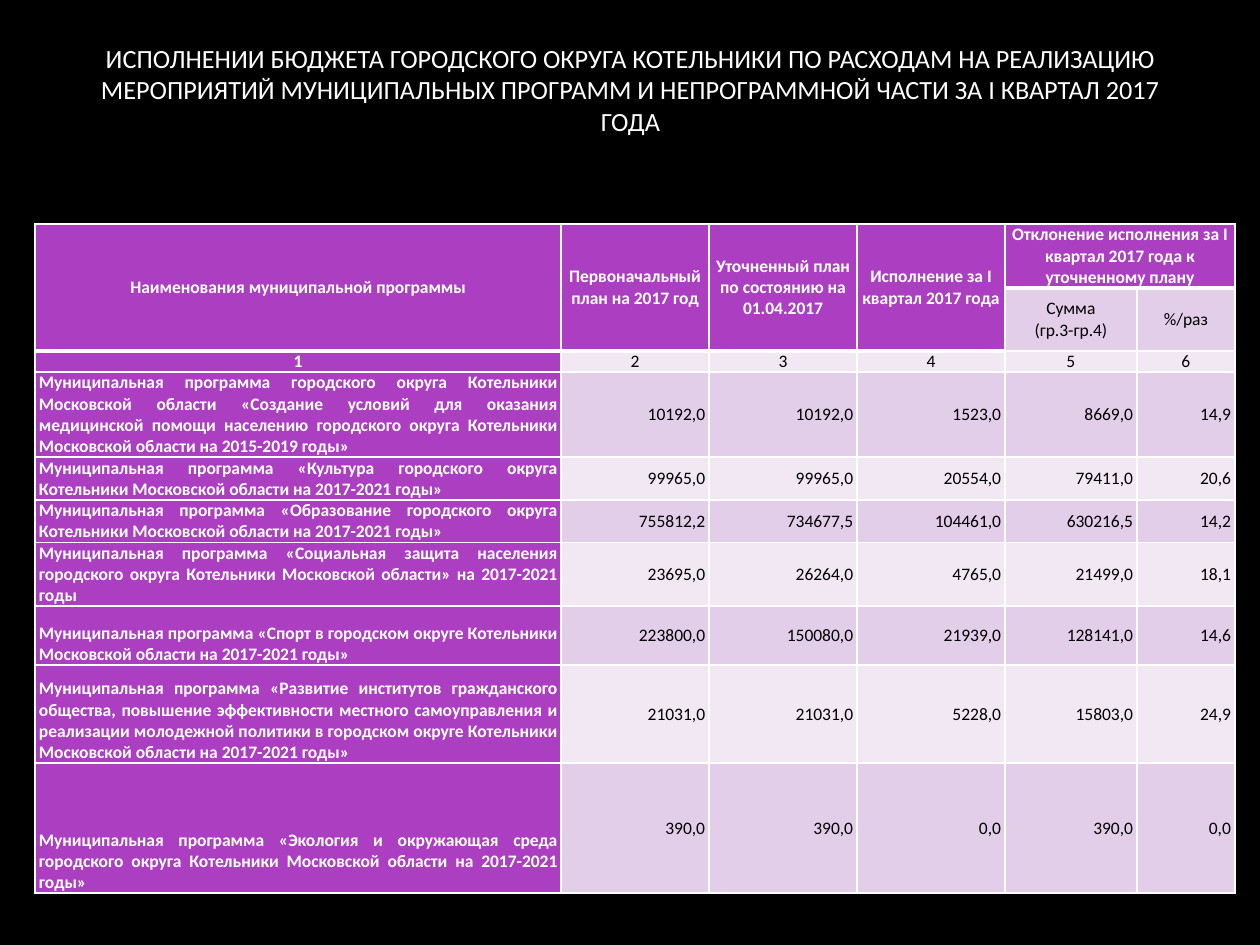
from dataclasses import dataclass

from lxml.etree import SubElement
from pptx import Presentation
from pptx.dml.color import RGBColor
from pptx.enum.text import MSO_ANCHOR as Anchor, PP_ALIGN as Align
from pptx.oxml.ns import qn
from pptx.util import Pt

# Content
TITLE = ("ИСПОЛНЕНИИ БЮДЖЕТА ГОРОДСКОГО ОКРУГА КОТЕЛЬНИКИ ПО РАСХОДАМ НА РЕАЛИЗАЦИЮ "
         "МЕРОПРИЯТИЙ МУНИЦИПАЛЬНЫХ ПРОГРАММ И НЕПРОГРАММНОЙ ЧАСТИ ЗА I КВАРТАЛ 2017 ГОДА")
HEADINGS = ["Наименования муниципальной программы", "Первоначальный план на 2017 год",
            "Уточненный план по состоянию на 01.04.2017", "Исполнение за I квартал 2017 года"]
DEVIATION = "Отклонение исполнения за I квартал 2017 года к уточненному плану"
DEVIATION_PARTS = ["Сумма\n(гр.3-гр.4)", "%/раз"]
PROGRAMS = [
    ("Муниципальная программа городского округа Котельники Московской области «Создание условий "
     "для оказания медицинской помощи населению городского округа Котельники Московской области "
     "на 2015-2019 годы»", "10192,0", "10192,0", "1523,0", "8669,0", "14,9"),
    ("Муниципальная программа «Культура городского округа Котельники Московской области "
     "на 2017-2021 годы»", "99965,0", "99965,0", "20554,0", "79411,0", "20,6"),
    ("Муниципальная программа «Образование городского округа Котельники Московской области "
     "на 2017-2021 годы»", "755812,2", "734677,5", "104461,0", "630216,5", "14,2"),
    ("Муниципальная программа «Социальная защита населения городского округа Котельники "
     "Московской области» на 2017-2021 годы", "23695,0", "26264,0", "4765,0", "21499,0", "18,1"),
    ("Муниципальная программа «Спорт в городском округе Котельники Московской области "
     "на 2017-2021 годы»", "223800,0", "150080,0", "21939,0", "128141,0", "14,6"),
    ("Муниципальная программа «Развитие институтов гражданского общества, повышение "
     "эффективности местного самоуправления и реализации молодежной политики в городском округе "
     "Котельники Московской области на 2017-2021 годы»",
     "21031,0", "21031,0", "5228,0", "15803,0", "24,9"),
    ("Муниципальная программа «Экология и окружающая среда городского округа Котельники "
     "Московской области на 2017-2021 годы»", "390,0", "390,0", "0,0", "390,0", "0,0"),
]

# Layout in px, 126 to the inch
PX = 914400 // 126
SLIDE = (1260, 945)
TITLE_BOX = (95, 42, 1071, 113)
TABLE_AT = (35, 224)
COLUMNS = [526, 148, 148, 148, 132, 98]
ROWS = [64, 63, 21, 85, 43, 42, 64, 59, 98, 130]
CELL_INSET = 4
NUMBER_ROW, FIRST_PROGRAM = 2, 3
SPLIT = len(HEADINGS)  # first of the two deviation columns


@dataclass(frozen=True)
class Theme:
    font: str = "Calibri"
    title_size: int = 15
    cell_size: int = 10
    background: str = "000000"
    light_text: str = "FFFFFF"
    dark_text: str = "000000"
    border: str = "FFFFFF"
    header: str = "AC3EC1"
    bands: tuple = ("F1E8F4", "E3CEE9")
    thin: int = 1
    thick: int = 3


THEME = Theme()


def px(*lengths):
    return [length * PX for length in lengths]


def write(frame, text, size, color, align, bold=False):
    for index, line in enumerate(text.split("\n")):
        paragraph = frame.paragraphs[0] if index == 0 else frame.add_paragraph()
        paragraph.alignment = align
        run = paragraph.add_run()
        run.text = line
        run.font.name, run.font.size, run.font.bold = THEME.font, Pt(size), bold
        run.font.color.rgb = RGBColor.from_string(color)


def draw_borders(cell, row, col):
    # The heavy rule runs under the dark heading cells
    dark_rows = 2 if col < SPLIT else 1
    heavy = {"lnT": row == dark_rows, "lnB": row < dark_rows}
    properties = cell._tc.get_or_add_tcPr()
    for side in ("lnL", "lnR", "lnT", "lnB"):
        width = THEME.thick if heavy.get(side) else THEME.thin
        line = SubElement(properties, qn(f"a:{side}"), w=str(Pt(width)))
        SubElement(SubElement(line, qn("a:solidFill")), qn("a:srgbClr"), val=THEME.border)


def fill_cell(cell, row, col, text):
    dark = row == 0 or col == 0
    cell.fill.solid()
    cell.fill.fore_color.rgb = RGBColor.from_string(THEME.header if dark else THEME.bands[row % 2])
    cell.margin_left = cell.margin_right = CELL_INSET * PX
    cell.margin_top = cell.margin_bottom = 0
    align, cell.vertical_anchor = Align.CENTER, Anchor.MIDDLE
    if row >= FIRST_PROGRAM:
        align = Align.RIGHT if col else Align.JUSTIFY
    if text == DEVIATION or (row >= FIRST_PROGRAM and col == 0):
        cell.vertical_anchor = Anchor.BOTTOM
    write(cell.text_frame, text, THEME.cell_size,
          THEME.light_text if dark else THEME.dark_text, align, dark)


def add_title(slide):
    frame = slide.shapes.add_textbox(*px(*TITLE_BOX)).text_frame
    frame.word_wrap = True
    frame.vertical_anchor = Anchor.TOP
    frame.margin_left = frame.margin_right = frame.margin_top = frame.margin_bottom = 0
    write(frame, TITLE, THEME.title_size, THEME.light_text, Align.CENTER)


def add_budget_table(slide):
    size = (sum(COLUMNS), sum(ROWS))
    table = slide.shapes.add_table(len(ROWS), len(COLUMNS), *px(*TABLE_AT, *size)).table
    table.first_row = table.horz_banding = False
    for column, width in zip(table.columns, COLUMNS):
        column.width = width * PX
    for table_row, height in zip(table.rows, ROWS):
        table_row.height = height * PX

    # Merged headings
    for col in range(SPLIT):
        table.cell(0, col).merge(table.cell(1, col))
    table.cell(0, SPLIT).merge(table.cell(0, SPLIT + 1))

    numbers = [str(n) for n in range(1, len(COLUMNS) + 1)]
    content = [HEADINGS + [DEVIATION, None], [None] * SPLIT + DEVIATION_PARTS, numbers, *PROGRAMS]
    for row, texts in enumerate(content):
        for col, text in enumerate(texts):
            cell = table.cell(row, col)
            draw_borders(cell, row, col)
            if text is not None:
                fill_cell(cell, row, col, text)


def main():
    deck = Presentation()
    deck.slide_width, deck.slide_height = px(*SLIDE)
    slide = deck.slides.add_slide(deck.slide_layouts[6])
    slide.background.fill.solid()
    slide.background.fill.fore_color.rgb = RGBColor.from_string(THEME.background)
    add_title(slide)
    add_budget_table(slide)
    deck.save("out.pptx")


if __name__ == "__main__":
    main()
